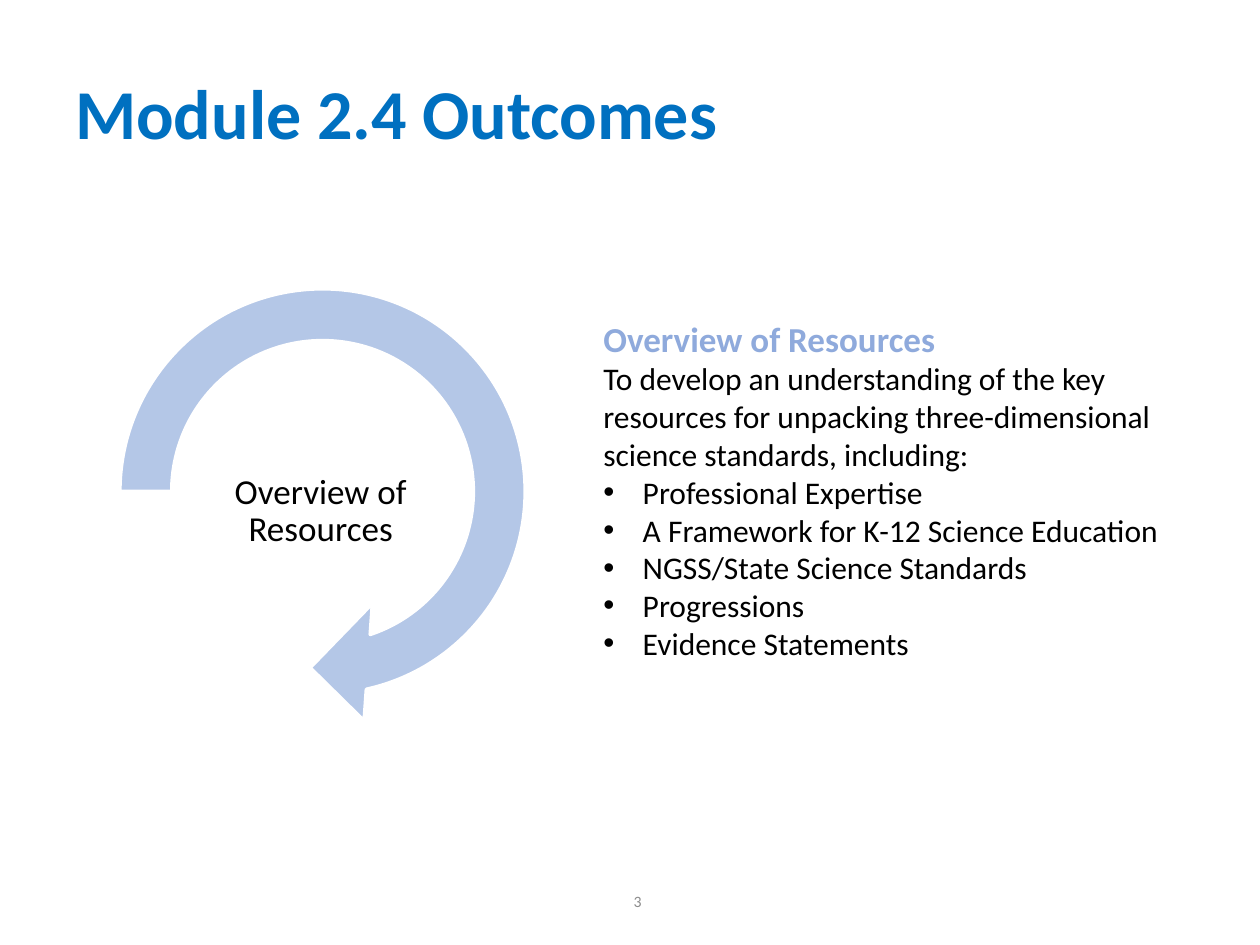
import pptx
import pptx.util
import pptx.dml.color
import pptx.enum.shapes
import pptx.enum.text
import pptx.oxml.ns
from lxml import etree

Pt = pptx.util.Pt
ALIGN = pptx.enum.text.PP_ALIGN
ANCHOR = pptx.enum.text.MSO_ANCHOR
FONT = "Calibri"
COLORS = {
    "title": "0070C0",
    "arrow": "B4C7E7",
    "outline": "FFFFFF",
    "heading": "8FAADC",
    "text": "000000",
    "number": "8C8C8C",
}
RESOURCES = [
    "Professional Expertise",
    "A Framework for K-12 Science Education",
    "NGSS/State Science Standards",
    "Progressions",
    "Evidence Statements",
]


def color(name):
    return pptx.dml.color.RGBColor.from_string(COLORS[name])


def add_box(s, left, top, width, height, anchor=ANCHOR.MIDDLE, inset=None):
    sp = s.shapes.add_textbox(Pt(left), Pt(top), Pt(width), Pt(height))
    tf = sp.text_frame
    tf.word_wrap = True
    tf.vertical_anchor = anchor
    if inset is not None:
        tf.margin_left = tf.margin_right = Pt(inset)
        tf.margin_top = tf.margin_bottom = Pt(inset)
    return tf


def add_text(p, text, size, fill="text", bold=False, align=ALIGN.LEFT, spacing=1.0):
    p.alignment = align
    p.line_spacing = spacing
    r = p.add_run()
    r.text = text
    r.font.name = FONT
    r.font.size = Pt(size)
    r.font.bold = bold
    r.font.color.rgb = color(fill)


def set_bullet(p, indent):
    pPr = p._p.get_or_add_pPr()
    pPr.set("marL", str(Pt(indent)))
    pPr.set("indent", str(-Pt(indent)))
    font = etree.SubElement(pPr, pptx.oxml.ns.qn("a:buFont"))
    font.set("typeface", "Arial")
    bullet = etree.SubElement(pPr, pptx.oxml.ns.qn("a:buChar"))
    bullet.set("char", "•")


def add_cycle_arrow(s, left, top, size):
    kind = pptx.enum.shapes.MSO_SHAPE.CIRCULAR_ARROW
    sp = s.shapes.add_shape(kind, Pt(left), Pt(top), Pt(size), Pt(size))
    for i, value in enumerate([0.11, 11.42, 45, 108, 0.125]):
        sp.adjustments[i] = value
    sp.shadow.inherit = False
    sp.fill.solid()
    sp.fill.fore_color.rgb = color("arrow")
    sp.line.color.rgb = color("outline")
    sp.line.width = Pt(2)


def add_outcomes(s):
    tf = add_box(s, 337.7, 177.8, 346.3, 206, ANCHOR.TOP)
    add_text(tf.paragraphs[0], "Overview of Resources", 20, "heading", bold=True)
    add_text(
        tf.add_paragraph(),
        "To develop an understanding of the key resources for unpacking "
        "three-dimensional science standards, including:",
        18,
    )
    for resource in RESOURCES:
        p = tf.add_paragraph()
        set_bullet(p, 22.5)
        add_text(p, resource, 18)


def main():
    prs = pptx.Presentation()
    prs.slide_width, prs.slide_height = Pt(720), Pt(540)
    s = prs.slides.add_slide(prs.slide_layouts[6])

    title = add_box(s, 36, 21.6, 648, 90)
    add_text(title.paragraphs[0], "Module 2.4 Outcomes", 40, "title", bold=True, spacing=0.9)

    add_cycle_arrow(s, 49.7, 146.2, 269.3)
    label = add_box(s, 108, 254.9, 150.5, 74.9, inset=0.7)
    add_text(label.paragraphs[0], "Overview of Resources", 20, align=ALIGN.CENTER, spacing=0.9)

    add_outcomes(s)

    number = add_box(s, 211.7, 500.4, 162, 28.8)
    add_text(number.paragraphs[0], "3", 9, "number", align=ALIGN.RIGHT)

    prs.save("out.pptx")


if __name__ == "__main__":
    main()
